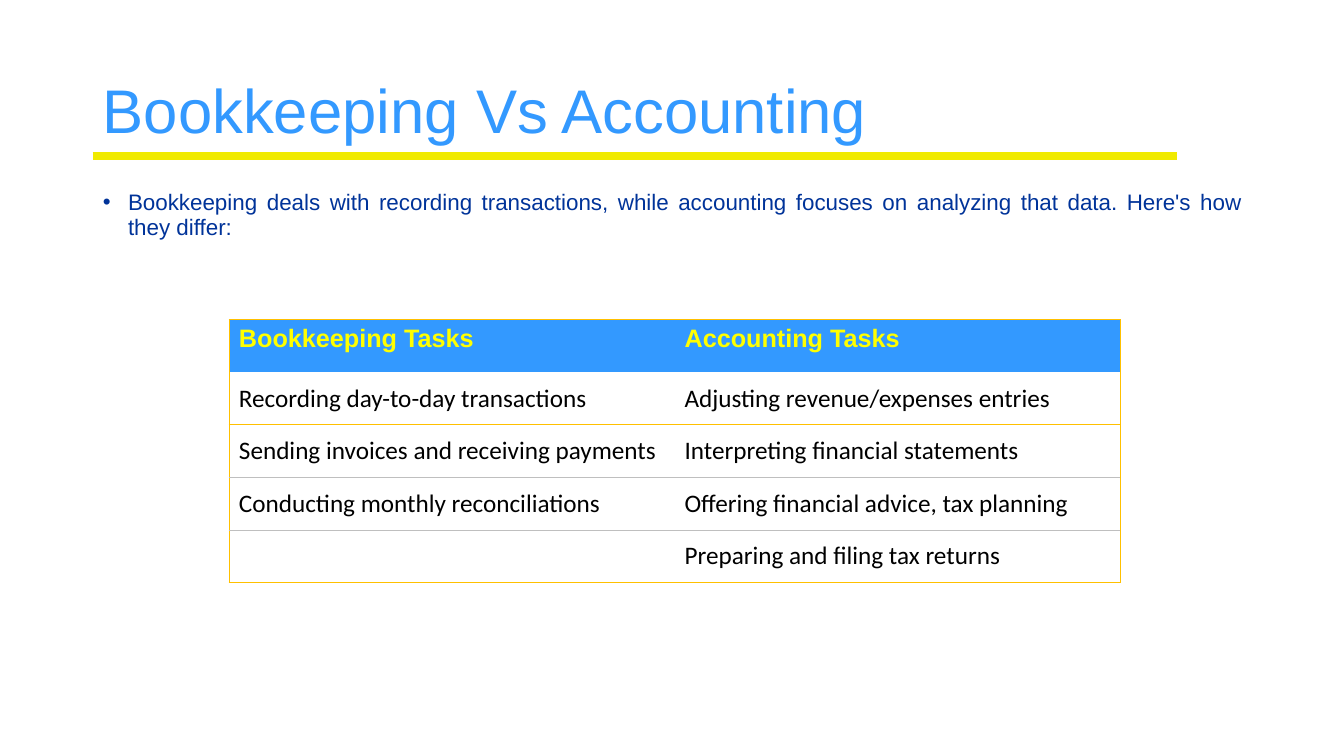
from lxml.etree import SubElement
from pptx import Presentation
from pptx.dml.color import RGBColor
from pptx.enum.shapes import MSO_CONNECTOR
from pptx.enum.text import MSO_ANCHOR, MSO_AUTO_SIZE, PP_ALIGN
from pptx.oxml.ns import qn
from pptx.util import Inches, Pt


def tint(code):
    """Turn a hex string into a colour."""
    return RGBColor.from_string(code)


def write(frame, text, size=18, font="Arial", color="000000", bold=False,
          align=PP_ALIGN.LEFT, space=1.0, bullet=None):
    """Put one formatted paragraph in a text frame."""
    para = frame.paragraphs[0]
    para.alignment = align
    para.line_spacing = space
    para.space_before = Pt(0)
    if bullet:
        props = para._p.get_or_add_pPr()
        props.set("marL", str(Inches(0.25)))
        props.set("indent", str(-Inches(0.25)))
        SubElement(props, qn("a:buFont"), typeface="Arial")
        SubElement(props, qn("a:buChar"), char=bullet)
    run = para.add_run()
    run.text = text
    run.font.size = Pt(size)
    run.font.name = font
    run.font.bold = bold
    run.font.color.rgb = tint(color)


def edge(cell, side, color):
    """Draw one thin border of a cell."""
    line = SubElement(cell._tc.get_or_add_tcPr(), qn("a:ln" + side),
                      w=str(Pt(0.5)))
    fill = SubElement(line, qn("a:solidFill"))
    SubElement(fill, qn("a:srgbClr"), val=color)


class Page:
    """Hold the colours and the current slide."""
    blue = "3399FF"
    navy = "003399"
    gold = "FFC000"
    gray = "BFBFBF"
    lemon = "F0EA00"
    plain = "{2D5ABB26-0587-4C30-8999-92F81FD0307C}"

    def __init__(self, deck):
        """Add a slide with a title and a body."""
        self.slide = deck.slides.add_slide(deck.slide_layouts[1])
        self.shapes = self.slide.shapes

    def place(self, index, box, anchor, text, **form):
        """Move and fill a placeholder."""
        shape = self.slide.placeholders[index]
        shape.left, shape.top, shape.width, shape.height = map(Inches, box)
        frame = shape.text_frame
        frame.word_wrap = True
        frame.auto_size = MSO_AUTO_SIZE.NONE
        frame.vertical_anchor = anchor
        write(frame, text, **form)

    def rule(self, left, right, top):
        """Draw the thick line behind the text."""
        line = self.shapes.add_connector(
            MSO_CONNECTOR.STRAIGHT, Inches(left), Inches(top),
            Inches(right), Inches(top))
        line.line.color.rgb = tint(self.lemon)
        line.line.width = Pt(6)
        SubElement(line._element.spPr, qn("a:effectLst"))
        self.shapes._spTree.insert(2, line._element)

    def table(self, box, rows):
        """Add the table with a filled head row."""
        grid = self.shapes.add_table(
            len(rows), len(rows[0]), *map(Inches, box)).table
        grid.horz_banding = False
        grid._tbl.tblPr.find(qn("a:tableStyleId")).text = self.plain
        for r, row in enumerate(rows):
            for c, text in enumerate(row):
                self.cell(grid.cell(r, c), r, c, text, len(rows) - 1)

    def cell(self, cell, r, c, text, last):
        """Fill one cell and draw its borders."""
        edge(cell, "R" if c else "L", self.gold)
        if r == 0:
            edge(cell, "T", self.gold)
        else:
            edge(cell, "B", self.gold if r in (1, last) else self.gray)
        if r == 0:
            cell.fill.solid()
            cell.fill.fore_color.rgb = tint(self.blue)
            write(cell.text_frame, text, color="FFFF00", bold=True)
            return
        cell.fill.background()
        cell.vertical_anchor = MSO_ANCHOR.MIDDLE
        if text:
            write(cell.text_frame, text, font="Calibri")


def main():
    """Build and save the slide."""
    deck = Presentation()
    deck.slide_width, deck.slide_height = Inches(13.33), Inches(7.5)
    page = Page(deck)
    page.rule(0.92, 11.67, 1.55)
    page.place(0, (0.92, 0.4, 11.5, 1.45), MSO_ANCHOR.MIDDLE,
               "Bookkeeping Vs Accounting", size=44, color=page.blue,
               space=0.9)
    page.place(1, (0.92, 1.85, 11.5, 4.76), MSO_ANCHOR.TOP,
               "Bookkeeping deals with recording transactions, while "
               "accounting focuses on analyzing that data. Here's how "
               "they differ:", size=16, color=page.navy,
               align=PP_ALIGN.JUSTIFY, space=0.9, bullet="•")
    page.table((2.27, 3.17, 8.84, 2.61), [
        ("Bookkeeping Tasks", "Accounting Tasks"),
        ("Recording day-to-day transactions",
         "Adjusting revenue/expenses entries"),
        ("Sending invoices and receiving payments",
         "Interpreting financial statements"),
        ("Conducting monthly reconciliations",
         "Offering financial advice, tax planning"),
        ("", "Preparing and filing tax returns"),
    ])
    deck.save("out.pptx")


if __name__ == "__main__":
    main()
